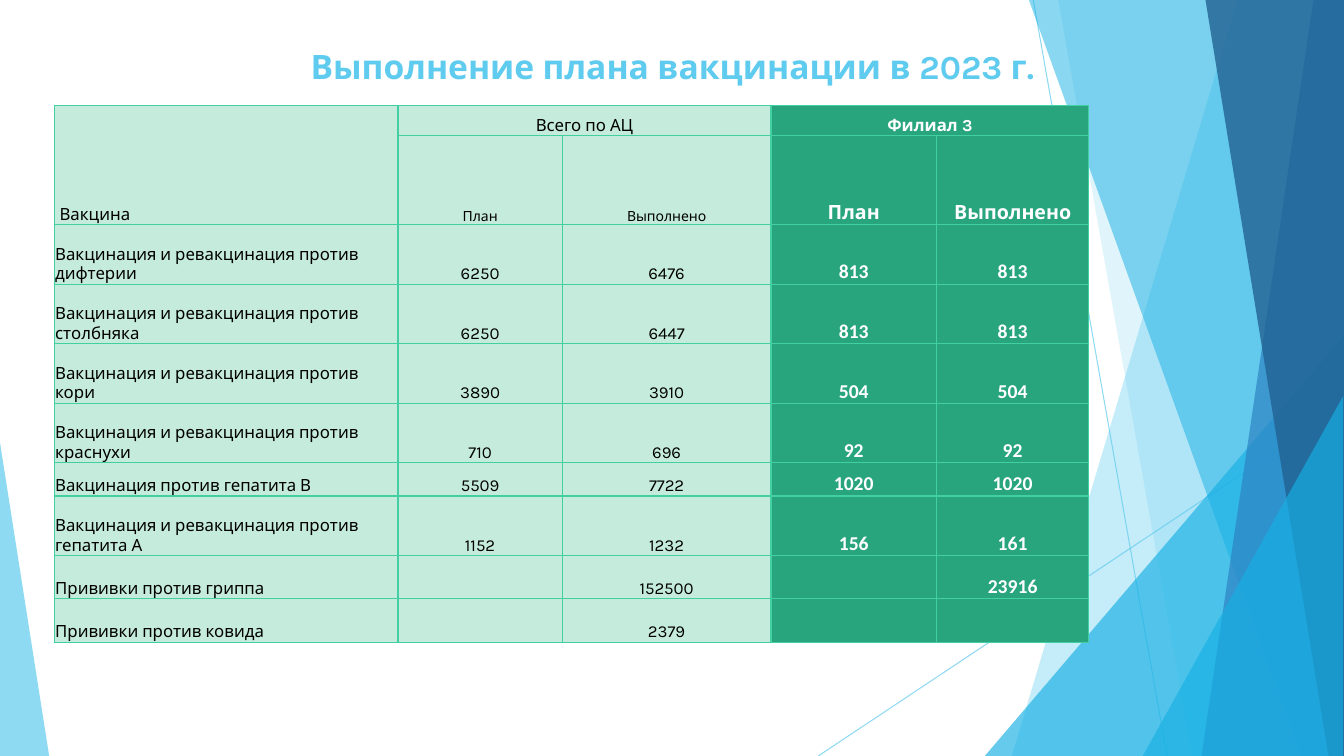
"""Build the slide on the 2023 vaccination plan."""
from dataclasses import dataclass

from lxml.etree import SubElement
from pptx import Presentation
from pptx.dml.color import RGBColor
from pptx.enum.shapes import MSO_CONNECTOR, MSO_SHAPE
from pptx.enum.text import MSO_ANCHOR, PP_ALIGN
from pptx.oxml.ns import qn
from pptx.util import Cm, Pt


@dataclass(frozen=True)
class Theme:
    sky: str = "5FCBEF"
    cyan: str = "17B0E4"
    blue: str = "2E83C3"
    navy: str = "226292"
    mint: str = "C5EBDC"
    green: str = "29A57D"
    edge: str = "42D0A2"
    black: str = "000000"
    white: str = "FFFFFF"
    font: str = "Karla"
    digits: str = "Calibri"
    title: int = 24
    large: int = 14
    body: int = 12
    small: int = 10


theme = Theme()


def tint(fill, color, alpha):
    fill.solid()
    fill.fore_color.rgb = RGBColor.from_string(color)
    node = fill.fore_color._xFill.find(qn("a:srgbClr"))
    SubElement(node, qn("a:alpha"), val=str(alpha * 1000))


def style(para, name, size, color, bold, align):
    para.alignment = align
    para.font.name = name
    para.font.size = Pt(size)
    para.font.bold = bold
    para.font.color.rgb = RGBColor.from_string(color)


deck = Presentation()
deck.slide_width, deck.slide_height = Cm(33.87), Cm(19.05)
slide = deck.slides.add_slide(deck.slide_layouts[6])
shapes = slide.shapes

for ends in ((26.04, 0, 29.41, 19.05), (33.86, 10.24, 20.62, 19.05)):
    line = shapes.add_connector(MSO_CONNECTOR.STRAIGHT, *map(Cm, ends))
    line.line.width = Pt(0.75)
    tint(line.line.fill, theme.sky, 70)
    SubElement(line._element.spPr, qn("a:effectLst"))

facets = (
    ("band", (31.19, 25.5), theme.sky, 36),
    ("band", (26.67, 30.05), theme.sky, 20),
    ("wedge", (24.82, 8.46, 9.04, 10.59, 1), theme.cyan, 66),
    ("band", (25.93, 32.79), theme.cyan, 50),
    ("band", (33.1, 30.28), theme.blue, 70),
    ("band", (30.38, 33.48), theme.navy, 80),
    ("wedge", (28.8, 9.98, 5.05, 9.07, 1), theme.cyan, 66),
    ("wedge", (0, 11.15, 1.24, 7.9, 0), theme.sky, 70),
)
for kind, size, color, alpha in facets:
    if kind == "band":
        top, base = map(Cm, size)
        path = shapes.build_freeform(top, 0)
        path.add_line_segments([
            (deck.slide_width, 0),
            (deck.slide_width, deck.slide_height),
            (base, deck.slide_height),
        ])
        facet = path.convert_to_shape()
    else:
        *place, peak = size
        facet = shapes.add_shape(MSO_SHAPE.ISOSCELES_TRIANGLE, *map(Cm, place))
        facet.adjustments[0] = peak
    facet.shadow.inherit = False
    facet.line.fill.background()
    tint(facet.fill, color, alpha)

title = shapes.add_textbox(Cm(2.34), Cm(1.02), Cm(29.21), Cm(2.72)).text_frame
title.word_wrap = True
title.text = "Выполнение плана вакцинации в 2023 г."
style(title.paragraphs[0], theme.font, theme.title, theme.sky, True, PP_ALIGN.CENTER)

rows = (
    ("Вакцина", "Всего по АЦ", "", "Филиал 3", ""),
    ("", "План", "Выполнено", "План", "Выполнено"),
    ("Вакцинация и ревакцинация против дифтерии", "6250", "6476", "813", "813"),
    ("Вакцинация и ревакцинация против столбняка", "6250", "6447", "813", "813"),
    ("Вакцинация и ревакцинация против кори", "3890", "3910", "504", "504"),
    ("Вакцинация и ревакцинация против краснухи", "710", "696", "92", "92"),
    ("Вакцинация против гепатита В", "5509", "7722", "1020", "1020"),
    ("Вакцинация и ревакцинация против гепатита А", "1152", "1232", "156", "161"),
    ("Прививки против гриппа", "", "152500", "", "23916"),
    ("Прививки против ковида", "", "2379", "", ""),
)
widths = (8.66, 4.14, 5.26, 4.17, 3.84)
heights = (0.76, 2.24, 1.5, 1.5, 1.5, 1.5, 0.84, 1.5, 1.09, 1.09)
table = shapes.add_table(
    len(rows), len(widths), Cm(1.37), Cm(2.66), Cm(sum(widths)), Cm(sum(heights))
).table
for col, width in zip(table.columns, widths):
    col.width = Cm(width)
for row, height in zip(table.rows, heights):
    row.height = Cm(height)

for r, texts in enumerate(rows):
    for c, text in enumerate(texts):
        cell = table.cell(r, c)
        dark = c > 2
        cell.text = text
        cell.vertical_anchor = MSO_ANCHOR.BOTTOM
        cell.margin_left = Cm(0.13 if r == c == 0 else 0.02)
        cell.margin_right = cell.margin_top = Cm(0.02)
        cell.margin_bottom = 0
        props = cell._tc.get_or_add_tcPr()
        for side in ("lnL", "lnR", "lnT", "lnB"):
            edge = SubElement(props, qn(f"a:{side}"), w=str(Pt(1)))
            paint = SubElement(edge, qn("a:solidFill"))
            SubElement(paint, qn("a:srgbClr"), val=theme.edge)
        cell.fill.solid()
        cell.fill.fore_color.rgb = RGBColor.from_string(
            theme.green if dark else theme.mint)
        if dark and r > 0:
            size = theme.large
        else:
            size = theme.small if r == 1 else theme.body
        style(
            cell.text_frame.paragraphs[0],
            theme.digits if dark and r > 1 else theme.font,
            size,
            theme.white if dark else theme.black,
            dark,
            PP_ALIGN.CENTER if c else PP_ALIGN.LEFT,
        )

for start, end in (((0, 0), (1, 0)), ((0, 1), (0, 2)), ((0, 3), (0, 4))):
    table.cell(*start).merge(table.cell(*end))

deck.save("out.pptx")
